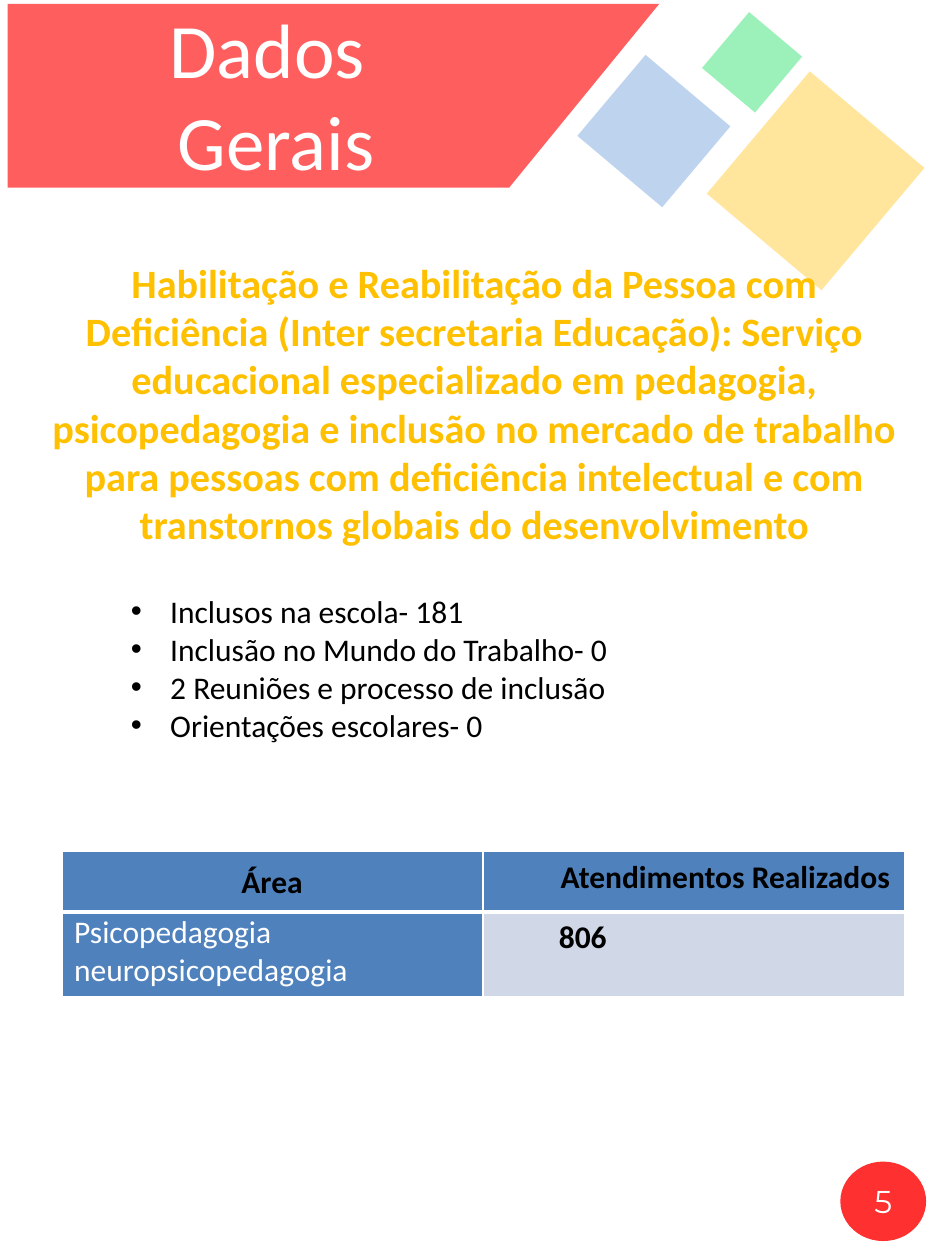
from lxml import etree
from pptx import Presentation
from pptx.dml.color import RGBColor
from pptx.enum import shapes as es, text as et
from pptx.oxml.ns import qn
from pptx.util import Pt

KIND = es.MSO_SHAPE
MID = et.PP_ALIGN.CENTER
WHITE, BLACK, RED, GOLD, BLUE = "FFFFFF", "000000", "FF0000", "FFC000", "4F81BD"


def tint(fill, color, alpha=100):
    fill.solid()
    fill.fore_color.rgb = RGBColor.from_string(color)
    if alpha < 100:
        clr = fill._xPr.find(".//" + qn("a:srgbClr"))
        etree.SubElement(clr, qn("a:alpha")).set("val", str(alpha * 1000))


def block(slide, kind, box, color, alpha=100, turn=0, edge=False):
    part = slide.shapes.add_shape(kind, *map(Pt, box))
    part.shadow.inherit = False
    part.rotation = turn
    tint(part.fill, color, alpha)
    if edge:
        tint(part.line.fill, color)
        part.line.width = Pt(2)
    else:
        part.line.fill.background()


def style(frame, size, color, bold=False, font="Calibri", align=None, left=0, hang=0):
    for para in frame.paragraphs:
        para.alignment = align
        if left:
            props = para._p.get_or_add_pPr()
            props.set("marL", str(Pt(left)))
            props.set("indent", str(Pt(-hang)))
            if hang:
                etree.SubElement(props, qn("a:buFont")).set("typeface", "Arial")
                etree.SubElement(props, qn("a:buChar")).set("char", "•")
        for run in para.runs:
            run.font.size = Pt(size)
            run.font.name = font
            run.font.bold = bold
            run.font.color.rgb = RGBColor.from_string(color)


def label(slide, box, words, size, color, wrap=True, **look):
    frame = slide.shapes.add_textbox(*map(Pt, box)).text_frame
    frame.word_wrap = wrap
    frame.text = words
    style(frame, size, color, **look)


def banner(slide, x, y, w, h):
    block(slide, KIND.RECTANGLE, (x, y, w, h), RED, 63)
    block(slide, KIND.RECTANGLE, (x + 373.7, y + 0.5, 150.5, h), WHITE, edge=True)
    block(slide, KIND.RIGHT_TRIANGLE, (x + 278, y + 9.4, 105.8, 86.4),
          WHITE, turn=270, edge=True)
    title = slide.shapes.title
    slide.shapes._spTree.append(title._element)
    title.left, title.top = Pt(x - 10), Pt(y - 8.7)
    title.width, title.height = Pt(326.9), Pt(120.2)
    frame = title.text_frame
    frame.auto_size = et.MSO_AUTO_SIZE.NONE
    frame.vertical_anchor = et.MSO_ANCHOR.MIDDLE
    frame.text = "Dados \vGerais"
    style(frame, 44, WHITE, align=MID)


def badge(slide, x, y, w, h):
    block(slide, KIND.OVAL, (x, y, w, h), RED, 81)
    label(slide, (x + 4.5, y + 8, w - 9, 28.8), "5", 18, WHITE,
          font="Montserrat", align=MID)


def tiles(slide, x, y):
    for dx, dy, w, h, color in [
        (77, 44.6, 91.4, 85.7, GOLD),
        (65.5, 0, 41.8, 39.6, "00DB50"),
        (0, 27.4, 60.5, 63.4, "558ED5"),
    ]:
        block(slide, KIND.RECTANGLE, (x + dx, y + dy, w, h), color, 39, 310.1)


def rule(cell, top, bottom):
    props = cell._tc.get_or_add_tcPr()
    for spot, (side, width) in enumerate(
            [("L", 1), ("R", 1), ("T", top), ("B", bottom)]):
        line = etree.Element(qn("a:ln" + side), w=str(Pt(width)))
        fill = etree.SubElement(line, qn("a:solidFill"))
        etree.SubElement(fill, qn("a:srgbClr")).set("val", WHITE)
        props.insert(spot, line)


def visits(slide, x, y, w):
    highs = (34.5, 48.3)
    grid = slide.shapes.add_table(2, 2, *map(Pt, (x, y, w, sum(highs)))).table
    for row, high in zip(grid.rows, highs):
        row.height = Pt(high)
    fills = ((BLUE, BLUE), (BLUE, "D0D8E8"))
    words = ("Atendimentos Realizados", "806")
    for r in range(2):
        for c in range(2):
            cell = grid.cell(r, c)
            tint(cell.fill, fills[r][c])
            rule(cell, *((1, 3), (3, 1))[r])
        cell.text = words[r]
        style(cell.text_frame, 18, BLACK, bold=True, left=36,
              align=(MID, None)[r])
    label(slide, (x - 36, y + 31, w / 2 + 94, 51), "Psicopedagogia\nneuropsicopedagogia",
          18, WHITE, left=36)
    label(slide, (x + 59, y + 2.2, 86.4, 28.8), "Área", 18, BLACK,
          wrap=False, bold=True, align=MID, left=36)


def main():
    deck = Presentation()
    deck.slide_width, deck.slide_height = Pt(540), Pt(720)
    slide = deck.slides.add_slide(deck.slide_layouts[5])
    banner(slide, 4.3, 2.2, 502.6, 105)
    badge(slide, 480.2, 663.8, 49, 45.4)
    tiles(slide, 343.4, 15.8)
    label(slide, (18, 144, 506.9, 174.2),
          "Habilitação e Reabilitação da Pessoa com Deficiência (Inter secretaria "
          "Educação): Serviço educacional especializado em pedagogia, psicopedagogia "
          "e inclusão no mercado de trabalho para pessoas com deficiência intelectual "
          "e com transtornos globais do desenvolvimento",
          23, GOLD, bold=True, align=MID)
    label(slide, (31.7, 334.8, 478.8, 94.3),
          "Inclusos na escola- 181\nInclusão no Mundo do Trabalho- 0\n"
          "2 Reuniões e processo de inclusão\nOrientações escolares- 0",
          18, BLACK, left=58.5, hang=22.5)
    visits(slide, 35.3, 486.7, 481.7)
    deck.save("out.pptx")


if __name__ == "__main__":
    main()
